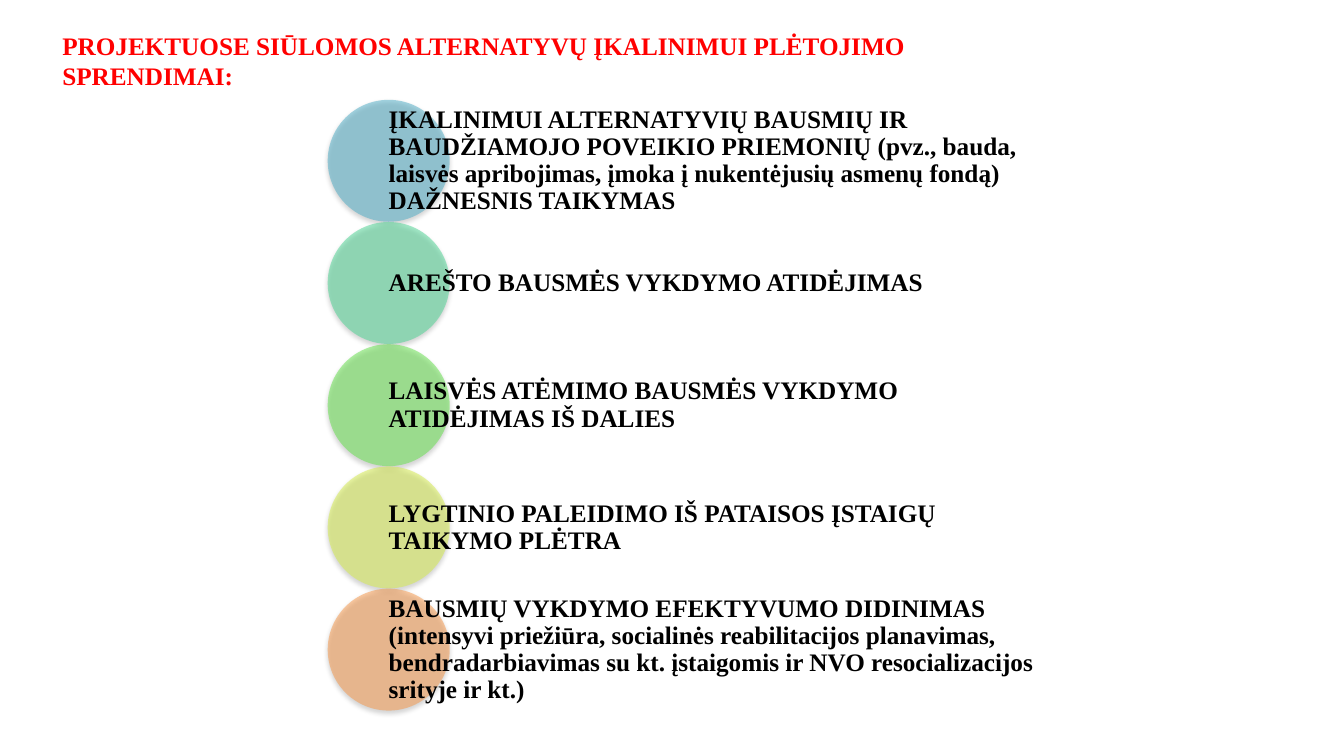
from lxml import etree
from pptx import Presentation
from pptx.dml.color import RGBColor
from pptx.enum.shapes import MSO_SHAPE
from pptx.enum.text import MSO_ANCHOR, PP_ALIGN
from pptx.oxml import parse_xml
from pptx.oxml.ns import nsdecls, qn
from pptx.util import Inches, Pt

OVAL = MSO_SHAPE.OVAL
TOP, MIDDLE = MSO_ANCHOR.TOP, MSO_ANCHOR.MIDDLE
LEFT = PP_ALIGN.LEFT

TITLE = "PROJEKTUOSE SIŪLOMOS ALTERNATYVŲ ĮKALINIMUI PLĖTOJIMO SPRENDIMAI:"
# Circle colour, circle rotation, wording
SOLUTIONS = [
    ("4BACC6", 0,
     "ĮKALINIMUI ALTERNATYVIŲ BAUSMIŲ IR BAUDŽIAMOJO POVEIKIO PRIEMONIŲ "
     "(pvz., bauda, laisvės apribojimas, įmoka į nukentėjusių asmenų fondą) "
     "DAŽNESNIS TAIKYMAS"),
    ("48D491", 0, "AREŠTO BAUSMĖS VYKDYMO ATIDĖJIMAS"),
    ("60E146", 0, "LAISVĖS ATĖMIMO BAUSMĖS VYKDYMO ATIDĖJIMAS IŠ DALIES"),
    ("D5EC46", 0, "LYGTINIO PALEIDIMO IŠ PATAISOS ĮSTAIGŲ TAIKYMO PLĖTRA"),
    ("F79646", 97.7,
     "BAUSMIŲ VYKDYMO EFEKTYVUMO DIDINIMAS (intensyvi priežiūra, socialinės "
     "reabilitacijos planavimas, bendradarbiavimas su kt. įstaigomis ir NVO "
     "resocializacijos srityje ir kt.)"),
]
CIRCLE_LEFT, FIRST_TOP = 3.25, 0.99
DIAMETER = 1.21
ROW_STEP = 1.2125
LABEL_WIDTH = 6.47

SHADOW = (
    f'<a:effectLst {nsdecls("a")}>'
    '<a:outerShdw blurRad="44450" dist="27940" dir="5400000" rotWithShape="0">'
    '<a:srgbClr val="000000"><a:alpha val="32000"/></a:srgbClr>'
    '</a:outerShdw></a:effectLst>'
)


def rgb(value):
    return RGBColor.from_string(value)


def set_attributes(target, values):
    for name, value in values.items():
        setattr(target, name, value)


def add_text(shapes, box, text, colour, frame_format, line_spacing):
    """Add a wrapped text box; box is left, top, width, height in inches."""
    frame = shapes.add_textbox(*map(Inches, box)).text_frame
    set_attributes(frame, {"word_wrap": True, **frame_format})
    paragraph = frame.paragraphs[0]
    paragraph.text = text
    set_attributes(paragraph, {"alignment": LEFT, "line_spacing": line_spacing})
    font = paragraph.runs[0].font
    set_attributes(font, {"name": "Times New Roman", "size": Pt(18), "bold": True})
    font.color.rgb = rgb(colour)


def add_circle(shapes, top, colour, rotation):
    """Add a half-transparent circle with a soft shadow below it."""
    circle = shapes.add_shape(OVAL, Inches(CIRCLE_LEFT), Inches(top),
                              Inches(DIAMETER), Inches(DIAMETER))
    circle.rotation = rotation
    circle.fill.solid()
    circle.fill.fore_color.rgb = rgb(colour)
    circle.line.fill.background()
    properties = circle.element.spPr
    fill_colour = properties.find(qn("a:solidFill")).find(qn("a:srgbClr"))
    etree.SubElement(fill_colour, qn("a:alpha")).set("val", "50000")
    properties.append(parse_xml(SHADOW))


def add_solution(shapes, row, colour, rotation, text):
    top = FIRST_TOP + row * ROW_STEP
    add_circle(shapes, top, colour, rotation)
    label_box = (CIRCLE_LEFT + DIAMETER / 2, top, LABEL_WIDTH, DIAMETER)
    label_format = {"vertical_anchor": MIDDLE, "margin_left": 0, "margin_right": 0,
                    "margin_top": Inches(0.03), "margin_bottom": Inches(0.03)}
    add_text(shapes, label_box, text, "000000", label_format, 0.9)


def main():
    presentation = Presentation()
    presentation.slide_width = Inches(13.33)
    presentation.slide_height = Inches(7.5)
    slide = presentation.slides.add_slide(presentation.slide_layouts[6])

    title_format = {"vertical_anchor": TOP, "margin_top": 0}
    add_text(slide.shapes, (0.52, 0.3, 8.86, 0.89), TITLE, "FF0000", title_format, 1.0)

    solution_list = slide.shapes.add_group_shape()
    for row, (colour, rotation, text) in enumerate(SOLUTIONS):
        add_solution(solution_list.shapes, row, colour, rotation, text)

    presentation.save("out.pptx")


if __name__ == "__main__":
    main()
